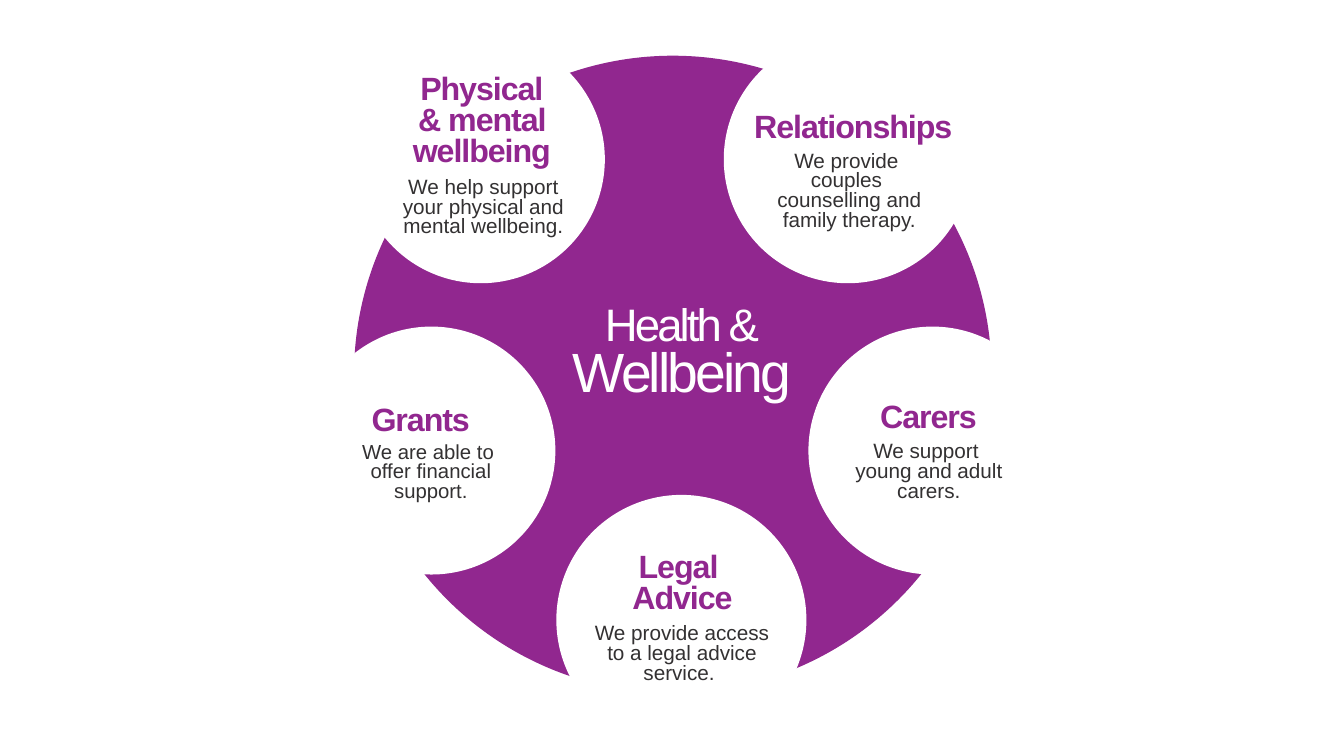
from copy import deepcopy
from dataclasses import dataclass

from pptx import Presentation
from pptx.dml.color import RGBColor
from pptx.enum.shapes import MSO_SHAPE
from pptx.enum.text import MSO_ANCHOR, MSO_AUTO_SIZE, PP_ALIGN
from pptx.util import Inches, Pt

PURPLE = RGBColor(0x91, 0x27, 0x8F)
CHARCOAL = RGBColor(0x33, 0x31, 0x32)
WHITE = RGBColor(0xFF, 0xFF, 0xFF)

OVAL = MSO_SHAPE.OVAL
TOP = MSO_ANCHOR.TOP
BOTTOM = MSO_ANCHOR.BOTTOM
CENTER = PP_ALIGN.CENTER
GROW = MSO_AUTO_SIZE.SHAPE_TO_FIT_TEXT

FONT = "Arial"
SLIDE_WIDTH = Inches(13.33)
SLIDE_HEIGHT = Inches(7.5)
TITLE_ONLY = 5


@dataclass
class Area:
    """Text area: centre and width in % of slide width, top and height in % of its height."""
    center: float
    top: float
    width: float
    height: float


@dataclass
class Style:
    size: float
    color: RGBColor
    bold: bool = False
    tracking: float = 0


@dataclass
class Circle:
    """Centre in % of slide width and height, diameter in % of slide height."""
    x: float
    y: float
    diameter: float = 32.8


@dataclass
class Service:
    circle: Circle
    heading: str
    heading_area: Area
    lines: list[str]
    lines_area: Area
    lines_size: float = 14.8


DISC = Circle(50.06, 49.53, 84.13)
TITLE_AREA = Area(50.74, 39.87, 33.38, 14.53)
HEADING = Style(23, PURPLE, True, -0.8)
TITLE_SMALL = Style(32.5, WHITE, tracking=-2.1)
TITLE_LARGE = Style(39.5, WHITE, tracking=-2.1)

SERVICES = [
    Service(Circle(35.78, 21.07),
            "Physical\n& mental wellbeing", Area(35.85, 9.2, 18.9, 13.73),
            ["We help support your physical and mental wellbeing."],
            Area(35.96, 22.93, 15.08, 9.33)),
    Service(Circle(63.08, 21.07),
            "Relationships", Area(63.49, 14.27, 17.48, 5.47),
            ["We provide ", "couples ", "counselling and family therapy."],
            Area(63.19, 19.47, 15.08, 12)),
    Service(Circle(50.7, 82, 33.07),
            "Legal \nAdvice", Area(50.78, 72.53, 16.2, 9.6),
            ["We provide access to a legal advice service. "],
            Area(50.74, 82, 16.13, 9.33)),
    Service(Circle(69.38, 59.6),
            "Carers", Area(69.08, 52.67, 17.25, 5.47),
            ["We support ", "young and adult carers."],
            Area(69.11, 57.87, 15.08, 9.33)),
    Service(Circle(32.1, 59.6),
            "Grants", Area(31.31, 53.07, 15.53, 5.47),
            ["We are able to ", "offer financial support."],
            Area(32.06, 58, 15.08, 9.2), 14.5),
]


def across(percent: float) -> int:
    return round(SLIDE_WIDTH * percent / 100)


def down(percent: float) -> int:
    return round(SLIDE_HEIGHT * percent / 100)


def draw_circle(page, circle: Circle, color: RGBColor, outlined: bool = False) -> None:
    size = down(circle.diameter)
    shape = page.shapes.add_shape(
        OVAL, across(circle.x) - size // 2, down(circle.y) - size // 2, size, size)
    shape.shadow.inherit = False
    shape.fill.solid()
    shape.fill.fore_color.rgb = color
    if outlined:
        shape.line.color.rgb = color
        shape.line.width = Pt(1)
    else:
        shape.line.fill.background()


def place(box, area: Area, anchor) -> None:
    box.left = across(area.center - area.width / 2)
    box.top = down(area.top)
    box.width = across(area.width)
    box.height = down(area.height)
    frame = box.text_frame
    frame.word_wrap = True
    frame.auto_size = GROW
    frame.vertical_anchor = anchor


def add_span(para, text: str, style: Style) -> None:
    """Add a run, turning each newline into a line break of the same style."""
    for index, part in enumerate(text.split("\n")):
        if index:
            para.add_line_break()
            para._p[-1].append(deepcopy(span.font._element))
        if not part:
            continue
        span = para.add_run()
        span.text = part
        span.font.name = FONT
        span.font.size = Pt(style.size)
        span.font.bold = style.bold
        span.font.color.rgb = style.color
        if style.tracking:
            span.font._element.set("spc", str(round(style.tracking * 100)))


def write(box, paragraphs: list[list[tuple[str, Style]]]) -> None:
    frame = box.text_frame
    for index, spans in enumerate(paragraphs):
        para = frame.add_paragraph() if index else frame.paragraphs[0]
        para.alignment = CENTER
        para.line_spacing = 0.8
        for text, style in spans:
            add_span(para, text, style)


def draw_text(page, area: Area, anchor, lines: list[str], style: Style) -> None:
    box = page.shapes.add_textbox(0, 0, 0, 0)
    place(box, area, anchor)
    write(box, [[(line, style)] for line in lines])


def draw_service(page, service: Service) -> None:
    draw_circle(page, service.circle, WHITE)
    draw_text(page, service.heading_area, BOTTOM, [service.heading], HEADING)
    draw_text(page, service.lines_area, TOP, service.lines,
              Style(service.lines_size, CHARCOAL))


def main() -> None:
    deck = Presentation()
    deck.slide_width = SLIDE_WIDTH
    deck.slide_height = SLIDE_HEIGHT
    page = deck.slides.add_slide(deck.slide_layouts[TITLE_ONLY])

    # Purple disc with a white circle for each service
    draw_circle(page, DISC, PURPLE, outlined=True)
    for service in SERVICES:
        draw_service(page, service)

    # Title in the middle, brought in front of the disc
    title = page.shapes.title
    place(title, TITLE_AREA, TOP)
    write(title, [[("Health &\n", TITLE_SMALL), ("Wellbeing", TITLE_LARGE)]])
    page.shapes._spTree.append(title._element)

    deck.save("out.pptx")


if __name__ == "__main__":
    main()
